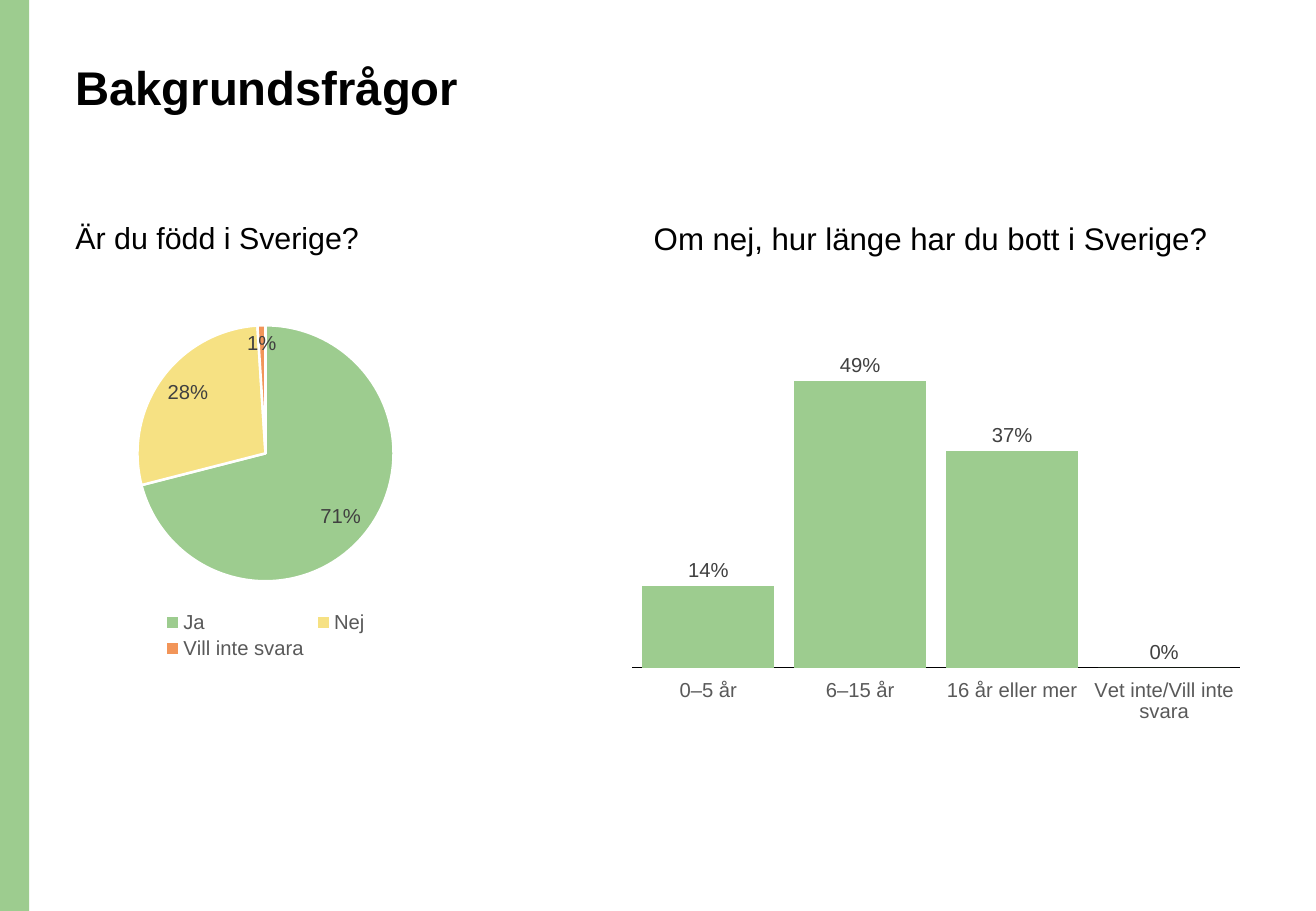
from pptx import Presentation
from pptx.chart.data import CategoryChartData
from pptx.dml.color import RGBColor
from pptx.enum.chart import XL_CHART_TYPE, XL_LABEL_POSITION, XL_LEGEND_POSITION, XL_TICK_LABEL_POSITION, XL_TICK_MARK
from pptx.enum.shapes import MSO_SHAPE
from pptx.enum.text import MSO_ANCHOR, MSO_AUTO_SIZE, PP_ALIGN
from pptx.oxml.xmlchemy import OxmlElement
from pptx.util import Inches, Pt

GREEN = RGBColor(0x9D, 0xCC, 0x8F)
YELLOW = RGBColor(0xF6, 0xE1, 0x83)
ORANGE = RGBColor(0xF2, 0x95, 0x59)
BLACK = RGBColor(0, 0, 0)
WHITE = RGBColor(0xFF, 0xFF, 0xFF)
LABEL_GREY = RGBColor(0x40, 0x40, 0x40)
AXIS_GREY = RGBColor(0x59, 0x59, 0x59)

LEFT = 0.52
HEADING_TOP = 1.79
CHART_TOP = 2.54


def set_font(font, size, color, bold=False):
    font.name = "Arial"
    font.size = Pt(size)
    font.bold = bold
    font.color.rgb = color


def add_survey_chart(kind, box, answers, label_position):
    data = CategoryChartData(number_format="0%")
    data.categories = list(answers)
    data.add_series("Andel", list(answers.values()))
    chart = s.shapes.add_chart(kind, *map(Inches, box), data).chart
    set_font(chart.font, 10, BLACK)
    chart.has_title = False
    chart.has_legend = False
    plot = chart.plots[0]
    plot.has_data_labels = True
    labels = plot.data_labels
    labels.show_value = True
    labels.show_percentage = False
    labels.number_format = "0%"
    labels.number_format_is_linked = False
    labels.position = label_position
    set_font(labels.font, 12, LABEL_GREY)
    return chart


prs = Presentation()
prs.slide_width = Inches(10.83)
prs.slide_height = Inches(7.5)
s = prs.slides.add_slide(prs.slide_layouts.get_by_name("Two Content"))

band = s.shapes.add_shape(MSO_SHAPE.RECTANGLE, 0, 0, Inches(0.24), prs.slide_height)
band.shadow.inherit = False
band.fill.solid()
band.fill.fore_color.rgb = GREEN
band.line.fill.background()

texts = [
    ("Bakgrundsfrågor", (LEFT, 0.48, 9.34, 1.02), 28, True),
    ("Är du född i Sverige?", (LEFT, HEADING_TOP, 4.58, 0.46), 18, False),
    ("Om nej, hur länge har du bott i Sverige?", (5.28, HEADING_TOP, 5.03, 0.58), 18.5, False),
]
for sp, (text, box, size, bold) in zip(list(s.placeholders), texts):
    sp.left, sp.top, sp.width, sp.height = map(Inches, box)
    tf = sp.text_frame
    tf.text = text
    tf.word_wrap = True
    tf.auto_size = MSO_AUTO_SIZE.NONE
    tf.vertical_anchor = MSO_ANCHOR.TOP
    p = tf.paragraphs[0]
    p.alignment = PP_ALIGN.LEFT
    p.line_spacing = 0.9
    p.space_before = Pt(0)
    set_font(p.font, size, BLACK, bold)
    pPr = p._p.get_or_add_pPr()
    pPr.set("marL", "0")
    pPr.set("indent", "0")
    pPr.insert_element_before(OxmlElement("a:buNone"), "a:tabLst", "a:defRPr", "a:extLst")

pie = add_survey_chart(
    XL_CHART_TYPE.PIE,
    (LEFT, CHART_TOP, 3.33, 2.93),
    {"Ja": 0.71, "Nej": 0.28, "Vill inte svara": 0.01},
    XL_LABEL_POSITION.INSIDE_END,
)
pie.has_legend = True
pie.legend.position = XL_LEGEND_POSITION.BOTTOM
pie.legend.include_in_layout = False
set_font(pie.legend.font, 12, AXIS_GREY)
for i, color in enumerate((GREEN, YELLOW, ORANGE)):
    slice_format = pie.plots[0].series[0].points[i].format
    slice_format.fill.solid()
    slice_format.fill.fore_color.rgb = color
    slice_format.line.color.rgb = WHITE
    slice_format.line.width = Pt(1.5)

columns = add_survey_chart(
    XL_CHART_TYPE.COLUMN_CLUSTERED,
    (5.1, CHART_TOP, 5.21, 3.48),
    {"0–5 år": 0.14, "6–15 år": 0.49, "16 år eller mer": 0.37, "Vet inte/Vill inte svara": 0},
    XL_LABEL_POSITION.OUTSIDE_END,
)
plot = columns.plots[0]
plot.vary_by_categories = False
plot.gap_width = 15
plot.overlap = -27
bars = plot.series[0].format
bars.fill.solid()
bars.fill.fore_color.rgb = GREEN
axis = columns.category_axis
axis.major_tick_mark = XL_TICK_MARK.NONE
axis.tick_label_position = XL_TICK_LABEL_POSITION.LOW
axis.format.line.color.rgb = BLACK
axis.format.line.width = Pt(0.75)
set_font(axis.tick_labels.font, 12, AXIS_GREY)
columns.value_axis.minimum_scale = 0
columns.value_axis.maximum_scale = 0.6
columns.value_axis.has_major_gridlines = False
columns.value_axis.visible = False

prs.save("out.pptx")
